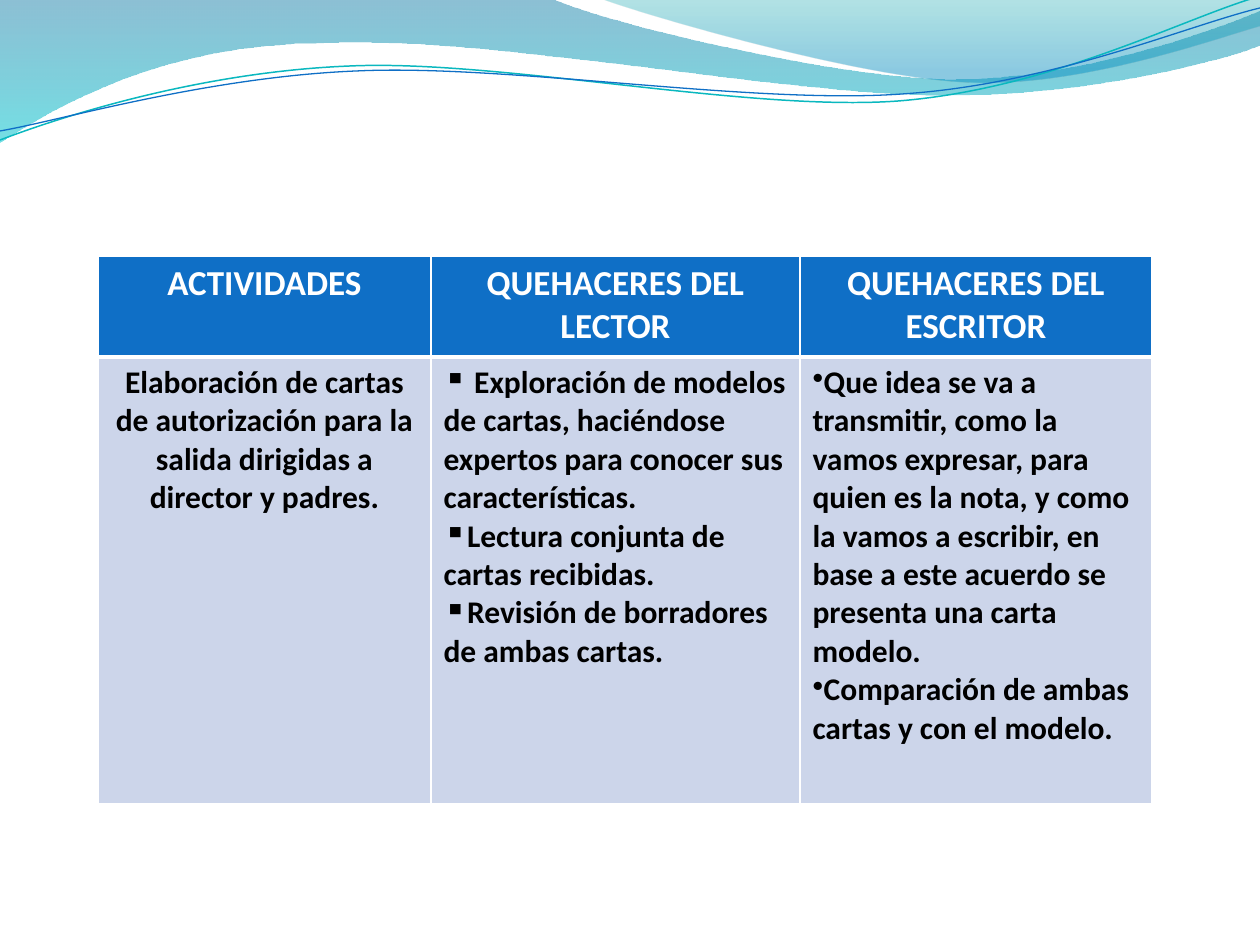
from dataclasses import dataclass

from lxml import etree
from pptx import Presentation
from pptx.dml.color import RGBColor
from pptx.enum.text import PP_ALIGN
from pptx.oxml.ns import qn
from pptx.util import Pt

CENTER, LEFT = PP_ALIGN.CENTER, PP_ALIGN.LEFT
EMU_PER_PX = 914400 / 126
WHITE, BLACK, BLUE, PALE_BLUE = "FFFFFF", "000000", "0F6FC6", "CCD5EA"
COLUMN_WIDTHS = (333, 369, 352)
ROW_HEIGHTS = (101, 447)


@dataclass(frozen=True)
class Wave:
    """A curve whose segments hold one point (straight) or three (cubic)."""
    start: tuple
    segments: tuple


@dataclass(frozen=True)
class Band:
    """A wave filled by a vertical gradient of (position, colour, opacity)."""
    wave: Wave
    stops: tuple


@dataclass(frozen=True)
class Strand:
    """A wave drawn as a thin line."""
    wave: Wave
    color: str
    width: float


@dataclass(frozen=True)
class Entry:
    """The text of a table cell with its optional bullet."""
    paragraphs: tuple
    bullet: str = ""


BANDS = (
    Band(Wave((0, 0), (
        ((554, 0),),
        ((600, 21), (837, 79), (955, 79)),
        ((1075, 79), (1207, 33), (1260, 11)),
        ((1260, 45),),
        ((1239, 55), (1096, 96), (940, 95)),
        ((784, 95), (481, 35), (324, 43)),
        ((163, 44), (58, 105), (0, 142)),
    )), ((0, "0074A1", 45), (1, "00C6CF", 55))),
    Band(Wave((604, 0), (
        ((641, 14), (859, 78), (969, 82)),
        ((1079, 87), (1211, 40), (1260, 26)),
        ((1260, 0),),
    )), ((0, "00A1A9", 30), (0.8, "008BBF", 45))),
)
STRANDS = (
    Strand(Wave((0, 140), (
        ((60, 117), (199, 72), (349, 66)),
        ((498, 59), (747, 112), (898, 101)),
        ((1050, 89), (1182, 19), (1257, -3)),
    )), "0AB8BF", 0.85),
    Strand(Wave((0, 131), (
        ((59, 121), (207, 77), (357, 71)),
        ((508, 64), (752, 105), (903, 94)),
        ((1053, 84), (1186, 26), (1260, 8)),
    )), BLUE, 0.75),
)
HEADINGS = ("ACTIVIDADES", "QUEHACERES DEL LECTOR", "QUEHACERES DEL ESCRITOR")
ENTRIES = (
    Entry(("Elaboración de cartas de autorización para la salida dirigidas a director y padres.",)),
    Entry((
        " Exploración de modelos de cartas, haciéndose expertos para conocer sus características.",
        "Lectura conjunta de cartas recibidas.",
        "Revisión de borradores de ambas cartas.",
    ), "▪"),
    Entry((
        "Que idea se va a transmitir, como la vamos expresar, para quien es la nota, "
        "y como la vamos a escribir, en base a este acuerdo se presenta una carta modelo.",
        "Comparación de ambas cartas y con el modelo.",
    ), "•"),
)


def px(length: int) -> int:
    """Turn px into EMU."""
    return round(length * EMU_PER_PX)


def rgb(color: str) -> RGBColor:
    """Turn a hex string into a colour."""
    return RGBColor.from_string(color)


def add_wave(slide, wave: Wave, closed: bool):
    """Build a freeform and bend its three-point segments into cubic curves."""
    builder = slide.shapes.build_freeform(*wave.start, scale=EMU_PER_PX)
    builder.add_line_segments([point for segment in wave.segments for point in segment], close=closed)
    shape = builder.convert_to_shape()
    shape.shadow.inherit = False
    straights = iter(list(shape.element.iter(qn("a:lnTo"))))
    for segment in wave.segments:
        steps = [next(straights) for _ in segment]
        if len(steps) == 3:
            steps[0].tag = qn("a:cubicBezTo")
            for step in steps[1:]:
                steps[0].append(step[0])
                step.getparent().remove(step)
    return shape


def add_band(slide, band: Band) -> None:
    """Draw a translucent gradient band."""
    shape = add_wave(slide, band.wave, True)
    shape.line.fill.background()
    shape.fill.gradient()
    shape.fill.gradient_angle = 270
    for stop, (position, color, opacity) in zip(shape.fill.gradient_stops, band.stops):
        stop.position = position
        stop.color.rgb = rgb(color)
    for node, (_, _, opacity) in zip(shape.element.spPr.iter(qn("a:srgbClr")), band.stops):
        etree.SubElement(node, qn("a:alpha"), val=str(opacity * 1000))


def add_strand(slide, strand: Strand) -> None:
    """Draw a thin curved line."""
    shape = add_wave(slide, strand.wave, False)
    shape.fill.background()
    shape.line.color.rgb = rgb(strand.color)
    shape.line.width = Pt(strand.width)


def write(paragraph, text: str, *, size: int, color: str, align=LEFT, bullet: str = "") -> None:
    """Write one formatted paragraph."""
    paragraph.alignment = align
    if bullet:
        etree.SubElement(paragraph._p.get_or_add_pPr(), qn("a:buChar"), char=bullet)
    run = paragraph.add_run()
    run.text = text
    run.font.name = "Calibri"
    run.font.size = Pt(size)
    run.font.bold = True
    run.font.color.rgb = rgb(color)


def fill_cell(cell, entry: Entry, *, fill: str, top: int, bottom: int, **text_format) -> None:
    """Set a cell's fill, white borders and paragraphs."""
    cell.fill.solid()
    cell.fill.fore_color.rgb = rgb(fill)
    properties = cell._tc.get_or_add_tcPr()
    for index, (side, width) in enumerate((("L", 1), ("R", 1), ("T", top), ("B", bottom))):
        border = etree.Element(qn(f"a:ln{side}"), w=str(Pt(width)))
        etree.SubElement(etree.SubElement(border, qn("a:solidFill")), qn("a:srgbClr"), val=WHITE)
        properties.insert(index, border)
    frame = cell.text_frame
    for index, text in enumerate(entry.paragraphs):
        paragraph = frame.add_paragraph() if index else frame.paragraphs[0]
        align = LEFT if entry.bullet else CENTER
        write(paragraph, text, align=align, bullet=entry.bullet, **text_format)


def add_activities(slide) -> None:
    """Draw the table of activities."""
    table = slide.shapes.add_table(
        len(ROW_HEIGHTS), len(COLUMN_WIDTHS), px(98), px(256),
        px(sum(COLUMN_WIDTHS)), px(sum(ROW_HEIGHTS))).table
    for row, height in zip(table.rows, ROW_HEIGHTS):
        row.height = px(height)
    for index, width in enumerate(COLUMN_WIDTHS):
        table.columns[index].width = px(width)
        fill_cell(table.cell(0, index), Entry((HEADINGS[index],)), fill=BLUE,
                  top=1, bottom=3, size=20, color=WHITE)
        fill_cell(table.cell(1, index), ENTRIES[index], fill=PALE_BLUE,
                  top=3, bottom=1, size=18, color=BLACK)


def main() -> None:
    """Build and save the slide."""
    presentation = Presentation()
    presentation.slide_width, presentation.slide_height = px(1260), px(945)
    slide = presentation.slides.add_slide(presentation.slide_layouts[6])
    for band in BANDS:
        add_band(slide, band)
    for strand in STRANDS:
        add_strand(slide, strand)
    add_activities(slide)
    presentation.save("out.pptx")


if __name__ == "__main__":
    main()
